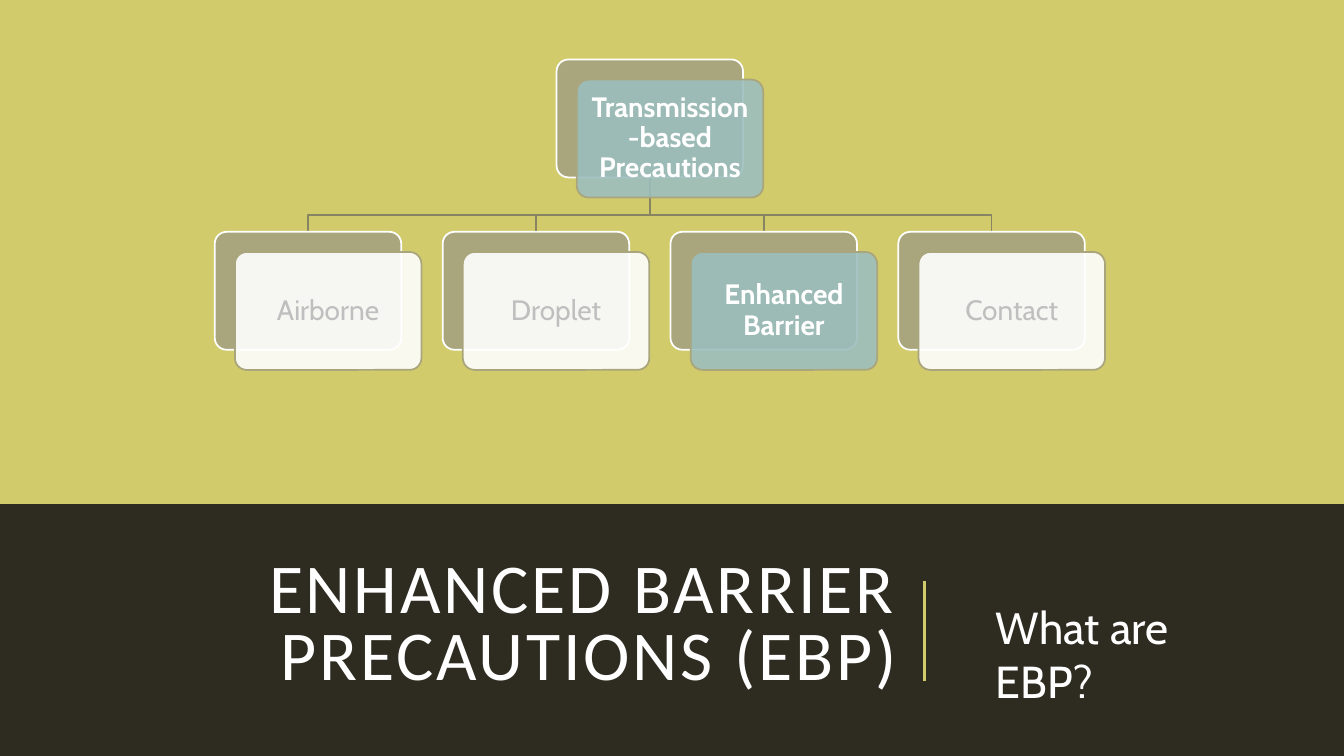
from lxml import etree
from pptx import Presentation
from pptx.dml.color import RGBColor
from pptx.enum import shapes, text
from pptx.oxml.ns import qn
from pptx.util import Inches, Pt

DARK = RGBColor(0x2E, 0x2B, 0x21)
LIME = RGBColor(0xD2, 0xCB, 0x6C)
OLIVE = RGBColor(0xA9, 0xA5, 0x7C)
BRANCH = RGBColor(0x87, 0x84, 0x63)
TEAL = RGBColor(0x9C, 0xBE, 0xBD)
WHITE = RGBColor(0xFF, 0xFF, 0xFF)
GREY = RGBColor(0xBF, 0xBF, 0xBF)

CARD_WIDTH, CARD_HEIGHT = 1.85, 1.17
CARD_OFFSET = 0.2
CARD_PITCH = 2.26
LEVEL_DROP = 1.71
BRANCH_RISE = 0.17
CATEGORIES = [("Airborne", False), ("Droplet", False),
              ("Enhanced Barrier", True), ("Contact", False)]


def add_panel(slide, kind, left, top, width, height, fill, line=None):
    panel = slide.shapes.add_shape(
        kind, Inches(left), Inches(top), Inches(width), Inches(height))
    panel.shadow.inherit = False
    panel.fill.solid()
    panel.fill.fore_color.rgb = fill
    if line is None:
        panel.line.fill.background()
    else:
        panel.line.color.rgb = line
        panel.line.width = Pt(1.25)
        panel.adjustments[0] = 0.1
    return panel


def style_paragraph(paragraph, font_name, size, color, bold=False):
    paragraph.font.name = font_name
    paragraph.font.size = Pt(size)
    paragraph.font.color.rgb = color
    paragraph.font.bold = bold


def add_card(slide, left, top, label, highlighted):
    rounded = shapes.MSO_SHAPE.ROUNDED_RECTANGLE
    add_panel(slide, rounded, left, top, CARD_WIDTH, CARD_HEIGHT, OLIVE, WHITE)
    front = add_panel(slide, rounded, left + CARD_OFFSET, top + CARD_OFFSET,
                      CARD_WIDTH, CARD_HEIGHT, TEAL if highlighted else WHITE, OLIVE)
    color = front.fill._xPr.find(qn("a:solidFill"))[0]
    etree.SubElement(color, qn("a:alpha"), val="90000")

    frame = front.text_frame
    frame.word_wrap = True
    frame.vertical_anchor = text.MSO_ANCHOR.MIDDLE
    frame.margin_left = frame.margin_right = Inches(0.11)
    frame.margin_top = frame.margin_bottom = Inches(0.11)
    paragraph = frame.paragraphs[0]
    paragraph.text = label
    paragraph.alignment = text.PP_ALIGN.CENTER
    paragraph.line_spacing = 0.9
    style_paragraph(paragraph, "Cabin", 20, WHITE if highlighted else GREY, highlighted)


def add_branch(slide, start_x, start_y, end_x, end_y):
    bend_y = end_y - BRANCH_RISE
    builder = slide.shapes.build_freeform(Inches(start_x), Inches(start_y))
    builder.add_line_segments(
        [(Inches(x), Inches(y)) for x, y in
         [(start_x, bend_y), (end_x, bend_y), (end_x, end_y)]], close=False)
    branch = builder.convert_to_shape()
    branch.shadow.inherit = False
    branch.fill.background()
    branch.line.color.rgb = BRANCH
    branch.line.width = Pt(1.25)


def add_hierarchy(slide, left, top):
    root_left = left + CARD_PITCH * (len(CATEGORIES) - 1) / 2
    child_top = top + LEVEL_DROP
    child_lefts = [left + CARD_PITCH * index for index in range(len(CATEGORIES))]
    for child_left in reversed(child_lefts):
        add_branch(slide, root_left + CARD_WIDTH / 2, top + CARD_HEIGHT,
                   child_left + CARD_WIDTH / 2, child_top)
    add_card(slide, root_left, top, "Transmission-based Precautions", True)
    for child_left, (label, highlighted) in zip(child_lefts, CATEGORIES):
        add_card(slide, child_left, child_top, label, highlighted)


def add_text(slide, left, top, width, height, content, font_name, size):
    box = slide.shapes.add_textbox(
        Inches(left), Inches(top), Inches(width), Inches(height))
    box.text_frame.word_wrap = True
    paragraph = box.text_frame.paragraphs[0]
    paragraph.text = content
    style_paragraph(paragraph, font_name, size, WHITE)
    return box.text_frame


def add_title_band(slide, left, top):
    title = add_text(slide, left + 0.5, top + 0.42, 8.5, 1.6,
                     "ENHANCED BARRIER PRECAUTIONS (EBP)", "Calibri", 50)
    title.vertical_anchor = text.MSO_ANCHOR.MIDDLE
    paragraph = title.paragraphs[0]
    paragraph.alignment = text.PP_ALIGN.RIGHT
    paragraph.line_spacing = 0.8
    paragraph.runs[0].font._element.set("spc", "200")

    divider_x = Inches(left + 9.17)
    divider = slide.shapes.add_connector(
        shapes.MSO_CONNECTOR.STRAIGHT,
        divider_x, Inches(top + 1.76), divider_x, Inches(top + 0.76))
    divider.line.color.rgb = LIME
    divider.line.width = Pt(1.5)
    etree.SubElement(divider._element.spPr, qn("a:effectLst"))

    add_text(slide, left + 9.78, top + 0.9, 2.8, 1.17, "What are EBP?", "Cabin", 32)


def main():
    presentation = Presentation()
    presentation.slide_width = Inches(13.33)
    presentation.slide_height = Inches(7.5)
    slide = presentation.slides.add_slide(presentation.slide_layouts[6])
    slide.background.fill.solid()
    slide.background.fill.fore_color.rgb = DARK
    add_panel(slide, shapes.MSO_SHAPE.RECTANGLE, 0, 0, 13.33, 5, LIME)
    add_hierarchy(slide, 2.13, 0.59)
    add_title_band(slide, 0, 5)
    presentation.save("out.pptx")


if __name__ == "__main__":
    main()
